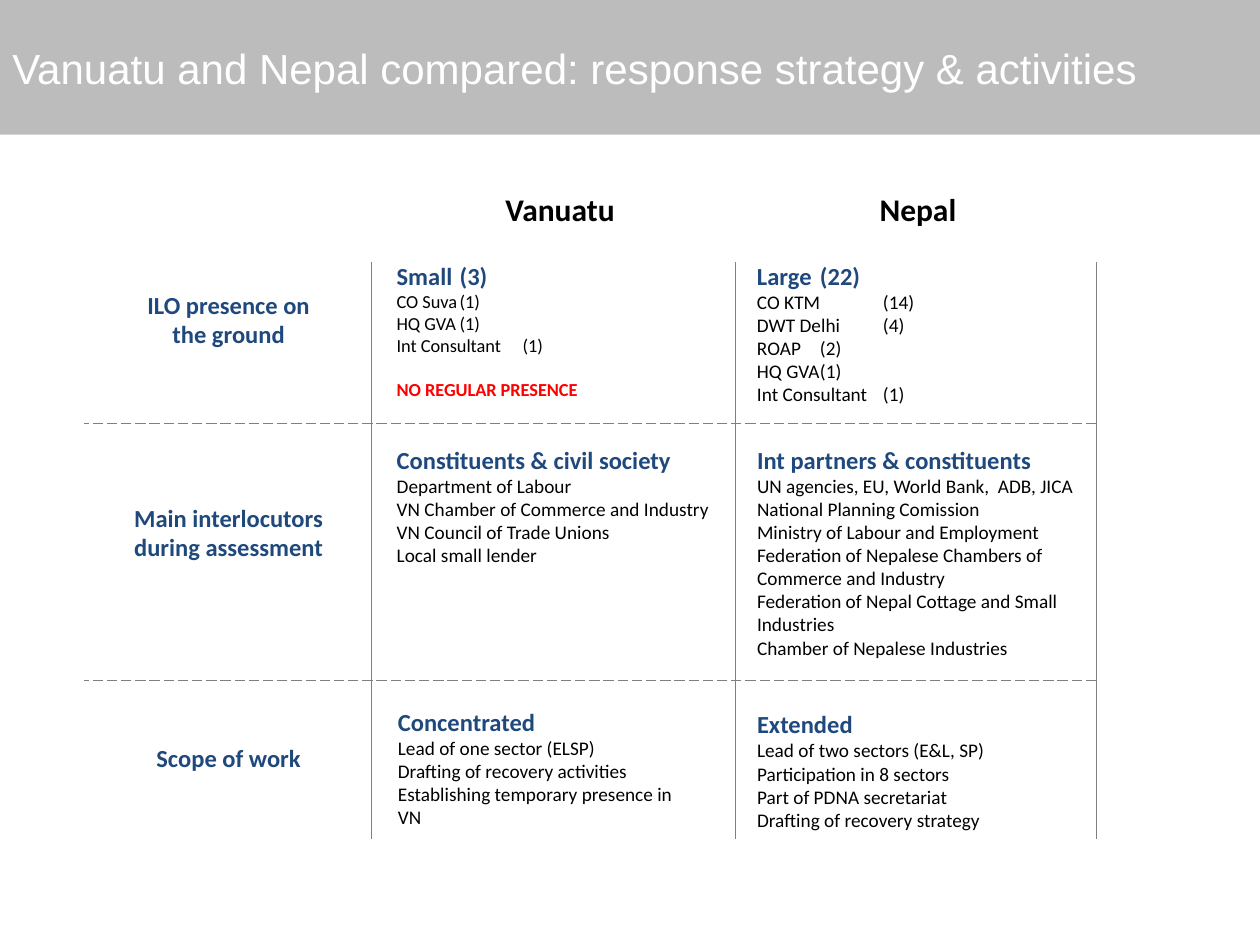
from pptx import Presentation
from pptx.dml.color import RGBColor as Rgb
from pptx.enum.dml import MSO_LINE as Dash
from pptx.enum.shapes import MSO_CONNECTOR as Conn, MSO_SHAPE as Kind
from pptx.enum.text import MSO_ANCHOR as Anchor, PP_ALIGN as Align
from pptx.oxml.ns import qn
from pptx.util import Inches, Pt
from lxml.etree import SubElement as Sub

TITLE = "Vanuatu and Nepal compared: response strategy & activities"
HEADS = [("Vanuatu", 3.5), ("Nepal", 6.34)]
LABELS = [
    ("ILO presence on\vthe ground", 2.25, 0.57),
    ("Main interlocutors during assessment", 3.94, 0.57),
    ("Scope of work", 5.85, 0.34),
]
CELLS = [
    ((3.05, 2.02, 2.17, 1.22), "small", "Small\t(3)",
     ["CO Suva\t(1)", "HQ GVA\t(1)", "Int Consultant\t(1)"],
     "NO REGULAR PRESENCE"),
    ((5.91, 2.02, 2.17, 1.5), "body", "Large\t(22)",
     ["CO KTM\t(14)", "DWT Delhi\t(4)", "ROAP\t(2)", "HQ GVA\t(1)",
      "Int Consultant\t(1)"], None),
    ((3.05, 3.48, 2.79, 1.5), "body", "Constituents & civil society",
     ["Department of Labour", "VN Chamber of Commerce and Industry",
      "VN Council of Trade Unions", "Local small lender"], None),
    ((5.91, 3.48, 2.79, 2), "body", "Int partners & constituents",
     ["UN agencies, EU, World Bank,  ADB, JICA",
      "National Planning Comission", "Ministry of Labour and Employment",
      "Federation of Nepalese Chambers of Commerce and Industry",
      "Federation of Nepal Cottage and Small Industries",
      "Chamber of Nepalese Industries"], None),
    ((3.06, 5.56, 2.57, 1.31), "body", "Concentrated",
     ["Lead of one sector (ELSP)", "Drafting of recovery activities",
      "Establishing temporary presence in VN"], None),
    ((5.91, 5.58, 2.55, 1.48), "body", "Extended",
     ["Lead of two sectors (E&L, SP)", "Participation in 8 sectors",
      "Part of PDNA secretariat", "Drafting of recovery strategy"], None),
]
COLS, ROWS = [2.95, 5.84, 8.7], [3.36, 5.4]
LEFT, TOP, END = 0.67, 2.08, 6.66


class Theme:
    """Colours and type styles of the slide."""
    band, alpha, rule = "A6A6A6", 75, "808080"
    thin = 0.75
    type = {
        "title": ("Arial", 24, False, "FFFFFF"),
        "head": ("Calibri", 18, True, "000000"),
        "label": ("Calibri", 14, True, "1F497D"),
        "body": ("Calibri", 11, False, "000000"),
        "small": ("Calibri", 10.5, False, "000000"),
        "alert": ("Calibri", 10.5, True, "FF0000"),
    }


def write(frame, lines, **form):
    """Fill a text frame with (text, style) lines."""
    frame.word_wrap = True
    for i, (text, style) in enumerate(lines):
        para = frame.paragraphs[0] if i == 0 else frame.add_paragraph()
        para.text = text
        for key, val in form.items():
            setattr(para, key, val)
        name, size, bold, tint = Theme.type[style]
        for run in para.runs:
            for key, val in dict(name=name, size=Pt(size), bold=bold).items():
                setattr(run.font, key, val)
            run.font.color.rgb = Rgb.from_string(tint)
    return para


def box(slide, at, lines, **form):
    """Add a text box and return its last paragraph."""
    area = slide.shapes.add_textbox(*map(Inches, at))
    return write(area.text_frame, lines, **form)


def band(slide):
    """Add the see-through title band."""
    bar = slide.shapes.add_shape(Kind.RECTANGLE, *map(Inches, (0, 0, 10, 1.07)))
    bar.shadow.inherit = False
    bar.fill.solid()
    bar.fill.fore_color.rgb = Rgb.from_string(Theme.band)
    tint = bar.fill._xPr.find(".//" + qn("a:srgbClr"))
    Sub(tint, qn("a:alpha")).set("val", str(Theme.alpha * 1000))
    bar.line.fill.background()
    bar.text_frame.vertical_anchor = Anchor.MIDDLE
    write(bar.text_frame, [(TITLE, "title")], alignment=Align.LEFT)


def rule(slide, ends, dash=None):
    """Add one grid line."""
    line = slide.shapes.add_connector(Conn.STRAIGHT, *map(Inches, ends))
    line.line.color.rgb = Rgb.from_string(Theme.rule)
    form = dict(width=Pt(Theme.thin), dash_style=dash)
    for key, val in form.items():
        setattr(line.line, key, val)
    Sub(line._element.spPr, qn("a:effectLst"))


def main():
    """Build and save the slide."""
    deck = Presentation()
    deck.slide_width, deck.slide_height = Inches(10), Inches(7.5)
    slide = deck.slides.add_slide(deck.slide_layouts[6])
    band(slide)
    for x in COLS:
        rule(slide, (x, TOP, x, END))
    for y in ROWS:
        rule(slide, (COLS[-1], y, LEFT, y), Dash.LONG_DASH)
    for text, x in HEADS:
        box(slide, (x, 1.46, 1.89, 0.4), [(text, "head")], alignment=Align.CENTER)
    for text, y, high in LABELS:
        box(slide, (0.83, y, 1.97, high), [(text, "label")], alignment=Align.CENTER)
    for at, style, head, items, alert in CELLS:
        lines = [(head, "label")] + [(item, style) for item in items]
        if alert:
            lines.append((alert, "alert"))
        last = box(slide, at, lines)
        if alert:
            last.space_before = Pt(12.6)
    deck.save("out.pptx")


if __name__ == "__main__":
    main()
